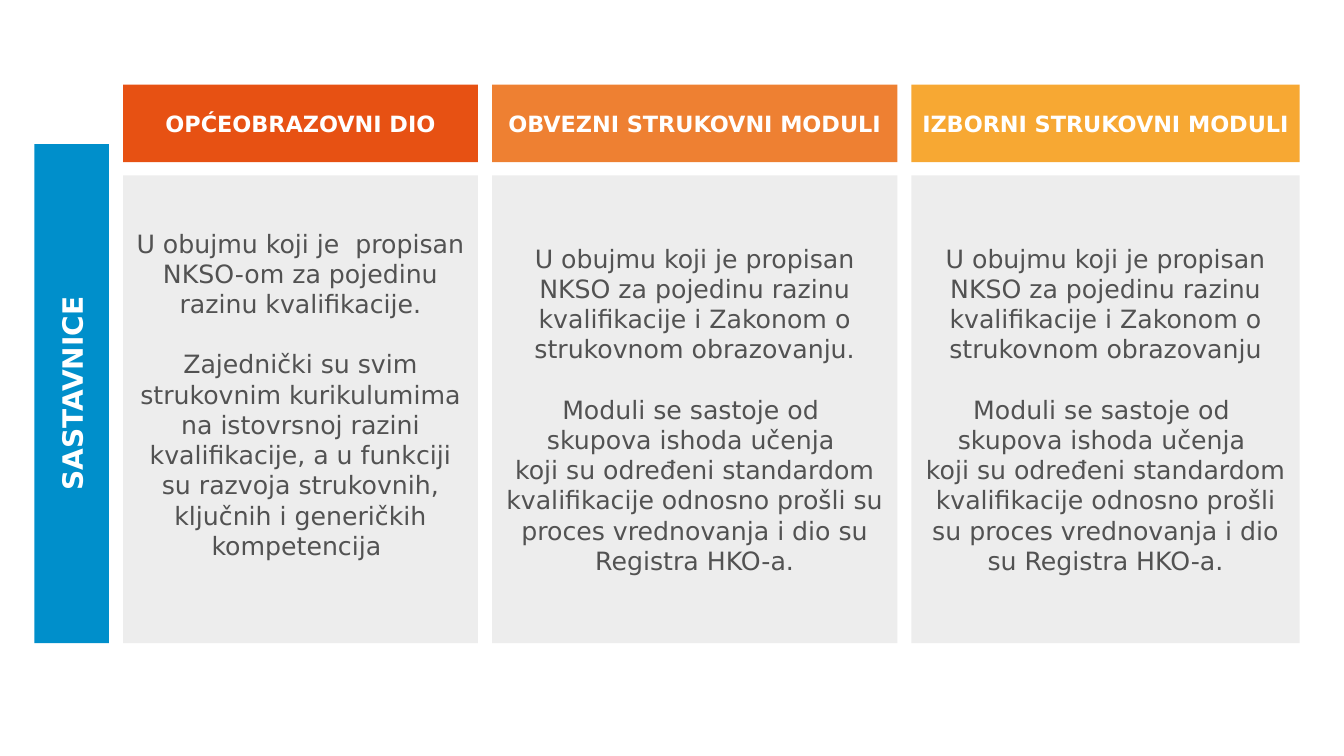
from pptx import Presentation
from pptx.dml.color import RGBColor
from pptx.enum.shapes import MSO_SHAPE
from pptx.enum.text import MSO_ANCHOR, PP_ALIGN
from pptx.util import Inches, Pt

RECTANGLE = MSO_SHAPE.RECTANGLE
MIDDLE = MSO_ANCHOR.MIDDLE
CENTER = PP_ALIGN.CENTER

# Content: each column has a heading, its colour, its width and two sections of lines
SIDE_LABEL = "SASTAVNICE"
MODULES = [
    "Moduli se sastoje od ",
    "skupova ishoda učenja ",
    "koji su određeni standardom kvalifikacije odnosno prošli su proces "
    "vrednovanja i dio su Registra HKO-a.",
]
SCOPE = ("U obujmu koji je propisan NKSO za pojedinu razinu kvalifikacije "
         "i Zakonom o strukovnom obrazovanju")
COLUMNS = [
    {"heading": "OPĆEOBRAZOVNI DIO", "color": "E75113", "width": 3.52,
     "bottom_inset": 0.35,
     "sections": [
         ["U obujmu koji je  propisan NKSO-om za pojedinu razinu kvalifikacije."],
         ["Zajednički su svim strukovnim kurikulumima na istovrsnoj razini "
          "kvalifikacije, a u funkciji su razvoja strukovnih, ključnih i "
          "generičkih kompetencija "]]},
    {"heading": "OBVEZNI STRUKOVNI MODULI", "color": "EE8032", "width": 4.02,
     "bottom_inset": 0.05, "sections": [[SCOPE + "."], MODULES]},
    {"heading": "IZBORNI STRUKOVNI MODULI", "color": "F7A833", "width": 3.85,
     "bottom_inset": 0.05, "sections": [[SCOPE], MODULES]},
]

THEME = {
    "font": "DejaVu Sans", "white": "FFFFFF", "text": "525252",
    "panel": "EDEDED", "side": "008FCB",
    "heading_size": 16, "body_size": 18, "side_size": 20, "section_gap": 21.5,
}

# Layout in inches
GAP = 0.14
SIDE_LEFT, SIDE_TOP, SIDE_WIDTH = 0.34, 1.43, 0.74
HEADING_TOP, HEADING_HEIGHT = 0.84, 0.77
BODY_TOP, BOTTOM = 1.74, 6.38


def add_box(slide, left, top, width, height, fill, sections, size, color,
            bold=False, bottom_inset=0.05):
    box = slide.shapes.add_shape(
        RECTANGLE, Inches(left), Inches(top), Inches(width), Inches(height))
    box.shadow.inherit = False
    box.fill.solid()
    box.fill.fore_color.rgb = RGBColor.from_string(fill)
    box.line.fill.background()
    frame = box.text_frame
    frame.word_wrap = True
    frame.vertical_anchor = MIDDLE
    frame.margin_bottom = Inches(bottom_inset)
    lines = [(line, section_no > 0 and line_no == 0)
             for section_no, section in enumerate(sections)
             for line_no, line in enumerate(section)]
    for number, (line, opens_section) in enumerate(lines):
        paragraph = frame.add_paragraph() if number else frame.paragraphs[0]
        paragraph.text = line
        paragraph.alignment = CENTER
        if opens_section:
            paragraph.space_before = Pt(THEME["section_gap"])
        font = paragraph.font
        font.name = THEME["font"]
        font.size = Pt(size)
        font.bold = bold
        font.color.rgb = RGBColor.from_string(color)
    return box


prs = Presentation()
prs.slide_width, prs.slide_height = Inches(13.33), Inches(7.5)
slide = prs.slides.add_slide(prs.slide_layouts[6])

# Side label, read from bottom to top
side = add_box(slide, SIDE_LEFT, SIDE_TOP, SIDE_WIDTH, BOTTOM - SIDE_TOP,
               THEME["side"], [[SIDE_LABEL]], THEME["side_size"],
               THEME["white"], bold=True)
side.text_frame._txBody.bodyPr.set("vert", "vert270")

# Columns: heading above panel
left = SIDE_LEFT + SIDE_WIDTH + GAP
for column in COLUMNS:
    add_box(slide, left, HEADING_TOP, column["width"], HEADING_HEIGHT,
            column["color"], [[column["heading"]]], THEME["heading_size"],
            THEME["white"], bold=True)
    add_box(slide, left, BODY_TOP, column["width"], BOTTOM - BODY_TOP,
            THEME["panel"], column["sections"], THEME["body_size"],
            THEME["text"], bottom_inset=column["bottom_inset"])
    left += column["width"] + GAP

prs.save("out.pptx")
